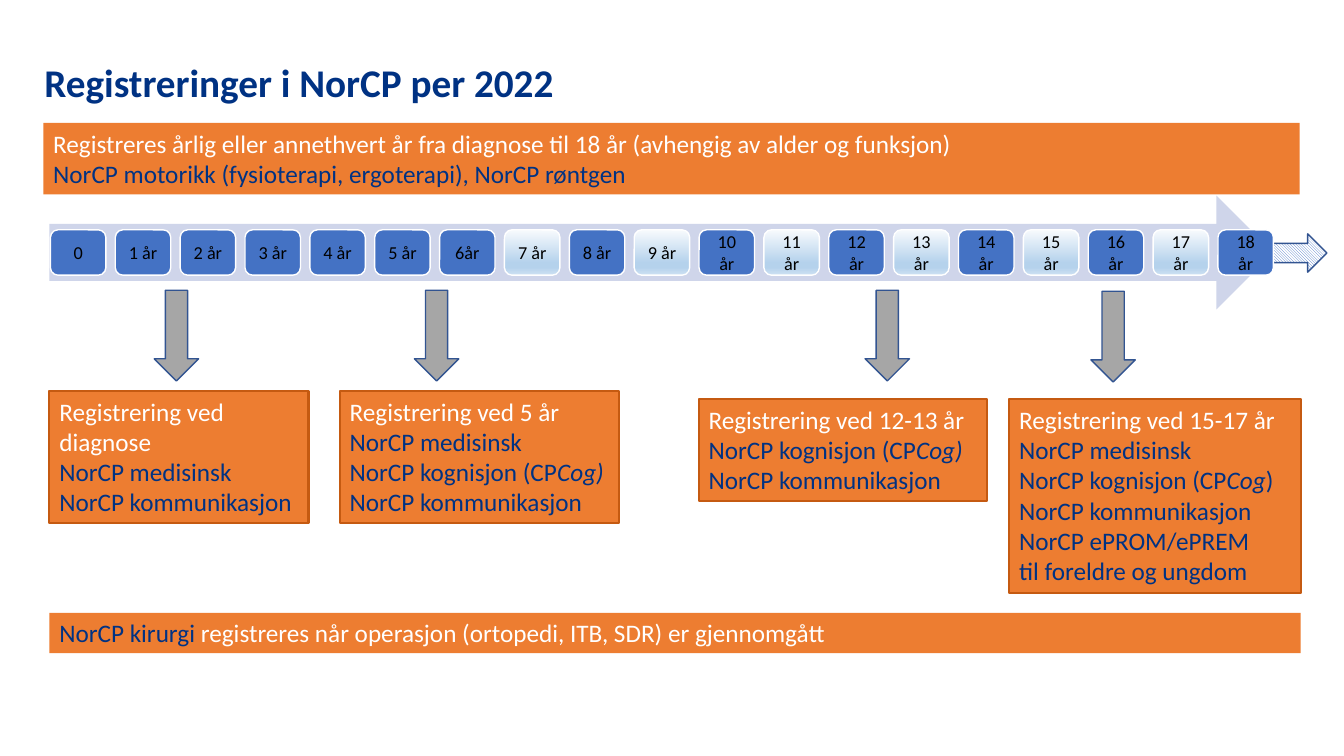
from lxml import etree
from pptx import Presentation
from pptx.dml.color import RGBColor
from pptx.enum import dml, shapes, text
from pptx.oxml import ns
from pptx.util import Inches, Pt

THEME = dict(
    font="Calibri", navy="003283", white="FFFFFF", black="000000",
    orange="ED7D31", rust="C55A11", blue="4472C4", edge="325491",
    grey="A6A6A6", band="CFD5EA",
    pale=[(0, "F7FAFD"), (74, "B5D2EC"), (83, "B5D2EC"), (100, "CEE1F2")],
    title=28, body=18, chip=13,
)

TITLE = "Registreringer i NorCP per 2022"
AGES = ["0", "1 år", "2 år", "3 år", "4 år", "5 år", "6år"] + [f"{n} år" for n in range(7, 19)]
PALE_AGES = range(7, 18, 2)
MEDICAL = [("NorCP medisinsk", "navy")]
COMMUNICATION = [("NorCP kommunikasjon", "navy")]
COGNITION = ("NorCP kognisjon (CP", "navy")

BARS = [
    ((0.43, 1.22, 12.46, 0.71), [
        [("Registreres årlig eller annethvert år fra diagnose til 18 år (avhengig av alder og funksjon)", "white")],
        [("NorCP motorikk (fysioterapi, ergoterapi), NorCP røntgen", "navy")]]),
    ((0.49, 6.08, 12.41, 0.4), [
        [("NorCP kirurgi ", "navy"),
         ("registreres når operasjon (ortopedi, ITB, SDR) er gjennomgått", "white")]]),
]
CARDS = [
    ((0.49, 3.88, 2.57, 1.31), [
        [("Registrering ved diagnose", "white")], MEDICAL, COMMUNICATION]),
    ((3.37, 3.88, 2.77, 1.31), [
        [("Registrering ved 5 år", "white")], MEDICAL,
        [COGNITION, ("Cog)", "navy", True)], COMMUNICATION]),
    ((6.93, 3.96, 2.86, 1.01), [
        [("Registrering ved 12-13 år", "white")],
        [COGNITION, ("Cog)", "navy", True)], COMMUNICATION]),
    ((10.01, 3.96, 2.89, 1.92), [
        [("Registrering ved 15-17 år", "white")], MEDICAL,
        [COGNITION, ("Cog", "navy", True), (")", "navy")], COMMUNICATION,
        [("NorCP ePROM/ePREM", "navy")], [("til foreldre og ungdom", "navy")]]),
]
POINTERS = [(1.3, 3.11), (3.88, 3.11), (8.35, 3.11), (10.59, 3.12)]

CHIP_LEFT, CHIP_TOP, CHIP_W, CHIP_H = 0.5, 2.28, 0.55, 0.45
CHIP_PITCH = (12.08 - CHIP_LEFT) / (len(AGES) - 1)


def rgb(name):
    return RGBColor.from_string(THEME[name])


def assign(obj, values):
    for key, value in values.items():
        setattr(obj, key, value)


def add_shape(parent, kind, box, fill=None, line=None, width=1):
    sp = parent.add_shape(kind, *map(Inches, box))
    sp.shadow.inherit = False
    if fill:
        sp.fill.solid()
        sp.fill.fore_color.rgb = rgb(fill)
    if line:
        sp.line.color.rgb = rgb(line)
        sp.line.width = Pt(width)
    else:
        sp.line.fill.background()
    return sp


def write(tf, lines, size, align=text.PP_ALIGN.LEFT, bold=False, **frame):
    assign(tf, dict(word_wrap=True, vertical_anchor=text.MSO_ANCHOR.TOP) | frame)
    for i, line in enumerate(lines):
        p = tf.paragraphs[0] if i == 0 else tf.add_paragraph()
        assign(p, dict(alignment=align, line_spacing=1.0))
        for words, color, *italic in line:
            r = p.add_run()
            r.text = words
            assign(r.font, dict(name=THEME["font"], size=Pt(THEME[size]),
                                bold=bold, italic=bool(italic)))
            r.font.color.rgb = rgb(color)


def shade(sp):
    sp.fill.gradient()
    sp.fill.gradient_angle = 270
    stops = sp.element.spPr.find(ns.qn("a:gradFill")).find(ns.qn("a:gsLst"))
    for gs in list(stops):
        stops.remove(gs)
    for pos, color in THEME["pale"]:
        gs = etree.SubElement(stops, ns.qn("a:gs"), pos=str(pos * 1000))
        etree.SubElement(gs, ns.qn("a:srgbClr"), val=color)


def add_timeline(s):
    onward = add_shape(s.shapes, ARROW, (12.1, 2.32, 1.06, 0.38), line="edge")
    onward.fill.patterned()
    onward.fill.pattern = dml.MSO_PATTERN.LIGHT_DOWNWARD_DIAGONAL
    onward.fill.fore_color.rgb = rgb("blue")
    onward.fill.back_color.rgb = rgb("white")

    timeline = s.shapes.add_group_shape().shapes
    add_shape(timeline, ARROW, (0.49, 1.94, 12.14, 1.13), "band")
    inset = Inches(0.07)
    for age, label in enumerate(AGES):
        box = (CHIP_LEFT + age * CHIP_PITCH, CHIP_TOP, CHIP_W, CHIP_H)
        sp = add_shape(timeline, shapes.MSO_SHAPE.ROUNDED_RECTANGLE, box, "blue", "white")
        if age in PALE_AGES:
            shade(sp)
        write(sp.text_frame, [[(label, "black")]], "chip", text.PP_ALIGN.CENTER,
              vertical_anchor=text.MSO_ANCHOR.MIDDLE, margin_left=inset,
              margin_right=inset, margin_top=inset, margin_bottom=inset)


def main():
    prs = Presentation()
    assign(prs, dict(slide_width=Inches(13.33), slide_height=Inches(7.5)))
    s = prs.slides.add_slide(prs.slide_layouts[5])
    title = s.shapes.title
    assign(title, dict(left=Inches(0.34), top=Inches(0.53),
                       width=Inches(11.87), height=Inches(0.63)))
    write(title.text_frame, [[(TITLE, "navy")]], "title", bold=True,
          auto_size=text.MSO_AUTO_SIZE.NONE)
    add_timeline(s)
    for items, line in ((BARS, None), (CARDS, "rust")):
        for box, lines in items:
            sp = add_shape(s.shapes, shapes.MSO_SHAPE.RECTANGLE, box, "orange", line, 1.5)
            write(sp.text_frame, lines, "body",
                  auto_size=text.MSO_AUTO_SIZE.SHAPE_TO_FIT_TEXT)
    for left, top in POINTERS:
        sp = add_shape(s.shapes, ARROW, (left, top, 0.9, 0.44), "grey", "edge")
        sp.rotation = 90
    prs.save("out.pptx")


ARROW = shapes.MSO_SHAPE.RIGHT_ARROW

if __name__ == "__main__":
    main()
